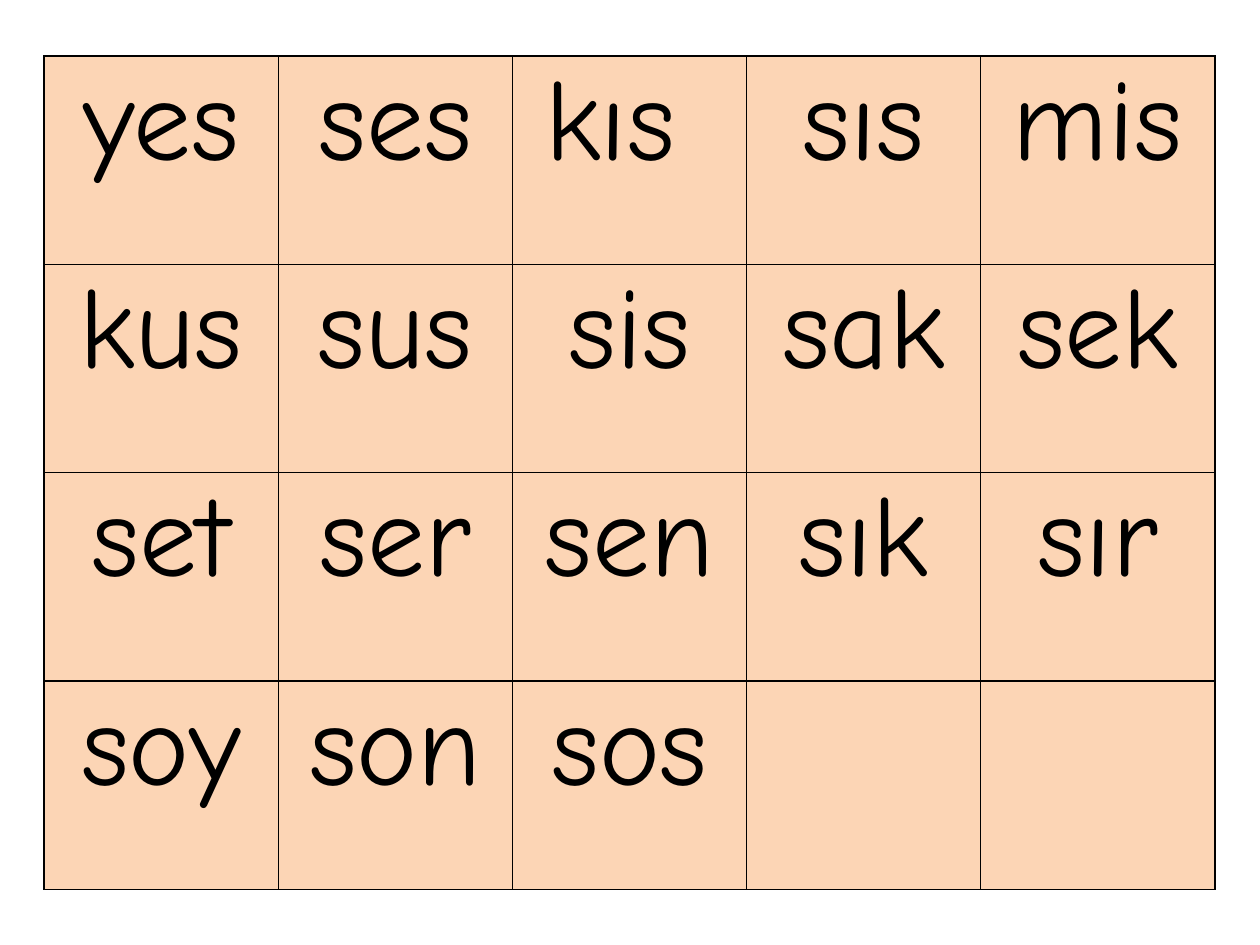
from lxml import etree
from pptx import Presentation
from pptx import util as u
from pptx.dml.color import RGBColor
from pptx.enum import text
from pptx.oxml import ns

PEACH = RGBColor(0xFC, 0xD5, 0xB5)
BLACK = RGBColor(0, 0, 0)
WORDS = [
    ["yes", "ses", "kıs ", "sıs", "mis"],
    ["kus", "sus", "sis", "sak", "sek"],
    ["set", "ser", "sen", "sık", "sır"],
    ["soy", "son", "sos", "", ""],
]
COLUMN_WIDTH = u.Cm(4.72)
ROW_HEIGHT = u.Cm(4.2)
CELL_FORMAT = {
    "margin_left": u.Cm(0.18),
    "margin_right": u.Cm(0.18),
    "margin_top": u.Cm(0),
    "margin_bottom": u.Cm(0),
    "vertical_anchor": text.MSO_ANCHOR.TOP,
}
FONT_FORMAT = {"name": "Comic Neue", "size": u.Pt(66), "bold": False}


def add_borders(cell):
    properties = cell._tc.get_or_add_tcPr()
    for side in ("a:lnL", "a:lnR", "a:lnT", "a:lnB"):
        line = etree.SubElement(properties, ns.qn(side), w=str(u.Pt(1)))
        fill = etree.SubElement(line, ns.qn("a:solidFill"))
        etree.SubElement(fill, ns.qn("a:srgbClr"), val=str(BLACK))


# Page
deck = Presentation()
deck.slide_width, deck.slide_height = u.Cm(25.4), u.Cm(19.05)
page = deck.slides.add_slide(deck.slide_layouts[6])

# Word card grid
row_count, column_count = len(WORDS), len(WORDS[0])
table = page.shapes.add_table(
    row_count, column_count, u.Cm(0.89), u.Cm(1.13),
    COLUMN_WIDTH * column_count, ROW_HEIGHT * row_count).table
table.first_row = False
table.horz_banding = False
for column in table.columns:
    column.width = COLUMN_WIDTH
for row in table.rows:
    row.height = ROW_HEIGHT

# Cards
for row, words in zip(table.rows, WORDS):
    for cell, word in zip(row.cells, words):
        for name, value in CELL_FORMAT.items():
            setattr(cell, name, value)
        add_borders(cell)
        cell.fill.solid()
        cell.fill.fore_color.rgb = PEACH
        if not word:
            continue
        para = cell.text_frame.paragraphs[0]
        para.alignment = text.PP_ALIGN.CENTER
        span = para.add_run()
        span.text = word
        for name, value in FONT_FORMAT.items():
            setattr(span.font, name, value)
        span.font.color.rgb = BLACK

deck.save("out.pptx")
